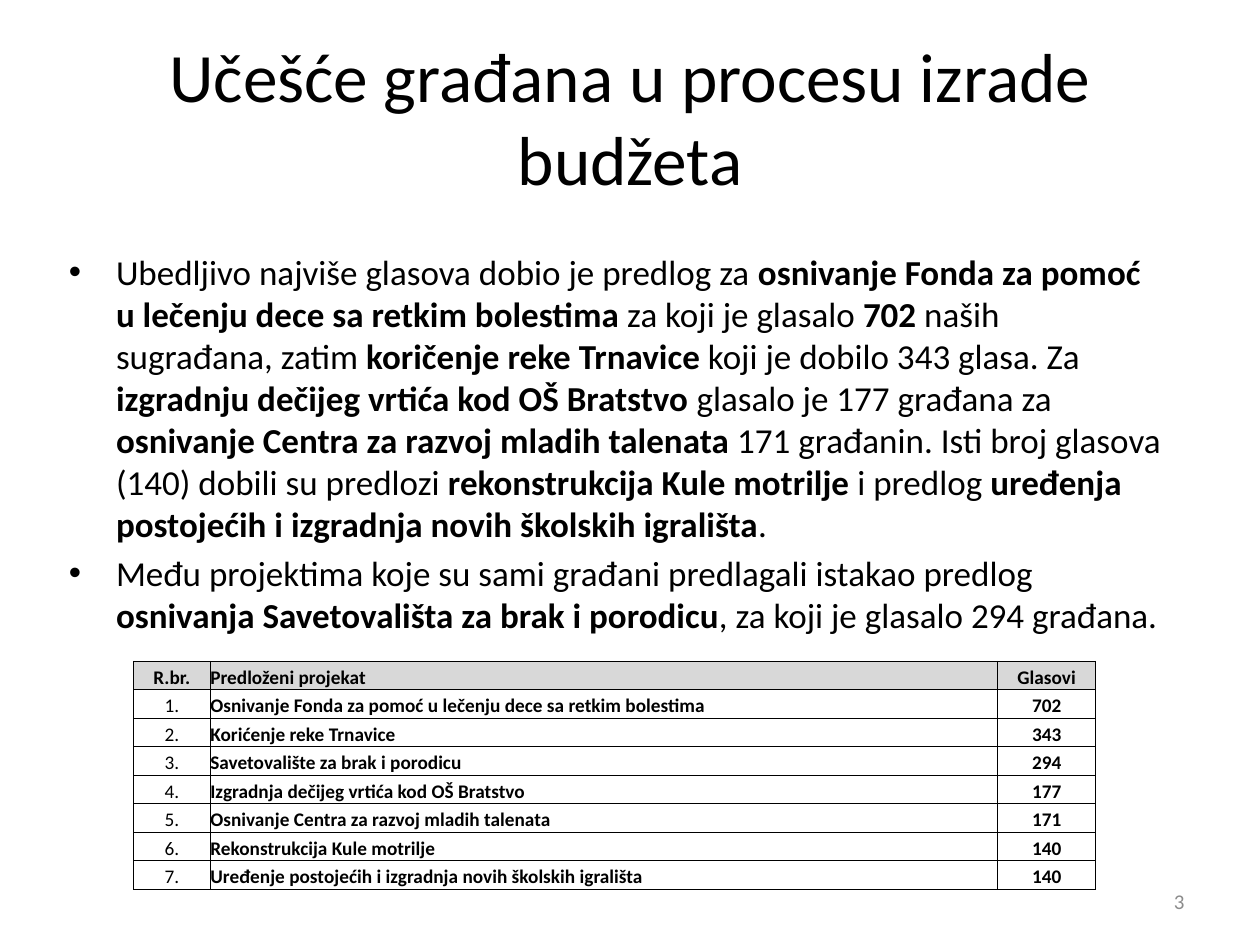
from lxml import etree
from pptx import Presentation
from pptx.dml.color import RGBColor
from pptx.enum.text import MSO_ANCHOR, MSO_AUTO_SIZE, PP_ALIGN
from pptx.oxml.ns import qn
from pptx.util import Cm, Pt

CENTER, LEFT, RIGHT = PP_ALIGN.CENTER, PP_ALIGN.LEFT, PP_ALIGN.RIGHT
MIDDLE, BOTTOM = MSO_ANCHOR.MIDDLE, MSO_ANCHOR.BOTTOM
NO_FIT = MSO_AUTO_SIZE.NONE
COLORS = {"text": "000000", "muted": "8C8C8C", "header": "D8D8D8", "border": "000000"}

BULLETS = [
    [("Ubedljivo najviše glasova dobio je predlog za ", False),
     ("osnivanje Fonda za pomoć u lečenju dece sa retkim bolestima", True),
     (" za koji je glasalo ", False),
     ("702", True),
     (" naših sugrađana, zatim ", False),
     ("koričenje reke Trnavice", True),
     (" koji je dobilo 343 glasa. Za ", False),
     ("izgradnju dečijeg vrtića kod OŠ Bratstvo", True),
     (" glasalo je 177 građana za ", False),
     ("osnivanje Centra za razvoj mladih talenata", True),
     (" 171 građanin. Isti broj glasova (140) dobili su predlozi ", False),
     ("rekonstrukcija Kule motrilje ", True),
     ("i predlog ", False),
     ("uređenja postojećih i izgradnja novih školskih igrališta", True),
     (".", False)],
    [("Među projektima koje su sami građani predlagali istakao predlog ", False),
     ("osnivanja Savetovališta za brak i porodicu", True),
     (", za koji je glasalo 294 građana.", False)],
]
PROJECTS = [
    ("Osnivanje Fonda za pomoć u lečenju dece sa retkim bolestima", 702),
    ("Korićenje reke Trnavice", 343),
    ("Savetovalište za brak i porodicu", 294),
    ("Izgradnja dečijeg vrtića kod OŠ Bratstvo", 177),
    ("Osnivanje Centra za razvoj mladih talenata", 171),
    ("Rekonstrukcija Kule motrilje", 140),
    ("Uređenje postojećih i izgradnja novih školskih igrališta", 140),
]


def add_text(paragraph, text, size, bold=False, color="text"):
    run = paragraph.add_run()
    run.text = text
    for attribute, value in {"name": "Calibri", "size": Pt(size), "bold": bold}.items():
        setattr(run.font, attribute, value)
    run.font.color.rgb = RGBColor.from_string(COLORS[color])


def add_borders(cell):
    properties = cell._tc.get_or_add_tcPr()
    for side in ("a:lnL", "a:lnR", "a:lnT", "a:lnB"):
        line = etree.SubElement(properties, qn(side), w=str(Pt(0.5)))
        fill = etree.SubElement(line, qn("a:solidFill"))
        etree.SubElement(fill, qn("a:srgbClr"), val=COLORS["border"])


prs = Presentation()
prs.slide_width, prs.slide_height = Cm(25.4), Cm(19.05)
slide = prs.slides.add_slide(prs.slide_layouts[5])

title = slide.shapes.title
title_format = {"left": Cm(1.27), "top": Cm(0.76), "width": Cm(22.86), "height": Cm(3.18)}
for attribute, value in title_format.items():
    setattr(title, attribute, value)
for attribute, value in {"auto_size": NO_FIT, "word_wrap": True, "vertical_anchor": MIDDLE}.items():
    setattr(title.text_frame, attribute, value)
heading = title.text_frame.paragraphs[0]
heading.alignment = CENTER
add_text(heading, "Učešće građana u procesu izrade budžeta", 39.6)

summary = slide.shapes.add_textbox(Cm(1.14), Cm(4.93), Cm(22.52), Cm(8.2)).text_frame
summary.word_wrap = True
for index, parts in enumerate(BULLETS):
    bullet = summary.paragraphs[0] if index == 0 else summary.add_paragraph()
    bullet.space_before = Pt(4 if index else 0)
    properties = bullet._p.get_or_add_pPr()
    properties.set("marL", str(Cm(0.95)))
    properties.set("indent", str(-Cm(0.95)))
    etree.SubElement(properties, qn("a:buFont"), typeface="Arial")
    etree.SubElement(properties, qn("a:buChar"), char="•")
    for text, bold in parts:
        add_text(bullet, text, 20, bold)

rows = [("R.br.", "Predloženi projekat", "Glasovi")]
rows += [(f"{number}.", project, str(votes))
         for number, (project, votes) in enumerate(PROJECTS, 1)]
column_widths = [Cm(1.55), Cm(15.87), Cm(1.98)]
votes_table = slide.shapes.add_table(
    len(rows), len(column_widths), Cm(2.69), Cm(13.33), sum(column_widths), Cm(4.6)).table
for attribute in ("first_row", "horz_banding"):
    setattr(votes_table, attribute, False)
for column, width in zip(votes_table.columns, column_widths):
    column.width = width

cell_format = {"margin_left": 0, "margin_right": 0, "margin_top": 0,
               "margin_bottom": 0, "vertical_anchor": BOTTOM}
for row_index, row in enumerate(rows):
    for column_index, text in enumerate(row):
        cell = votes_table.cell(row_index, column_index)
        for attribute, value in cell_format.items():
            setattr(cell, attribute, value)
        add_borders(cell)
        if row_index == 0:
            cell.fill.solid()
            cell.fill.fore_color.rgb = RGBColor.from_string(COLORS["header"])
        else:
            cell.fill.background()
        entry = cell.text_frame.paragraphs[0]
        entry.alignment = LEFT if column_index == 1 else CENTER
        add_text(entry, text, 11, bold=row_index == 0 or column_index > 0)

page_number = slide.shapes.add_textbox(Cm(18.2), Cm(17.66), Cm(5.93), Cm(1.01)).text_frame
for attribute, value in {"word_wrap": True, "vertical_anchor": MIDDLE}.items():
    setattr(page_number, attribute, value)
page_number.paragraphs[0].alignment = RIGHT
add_text(page_number.paragraphs[0], "3", 12, color="muted")

prs.save("out.pptx")
